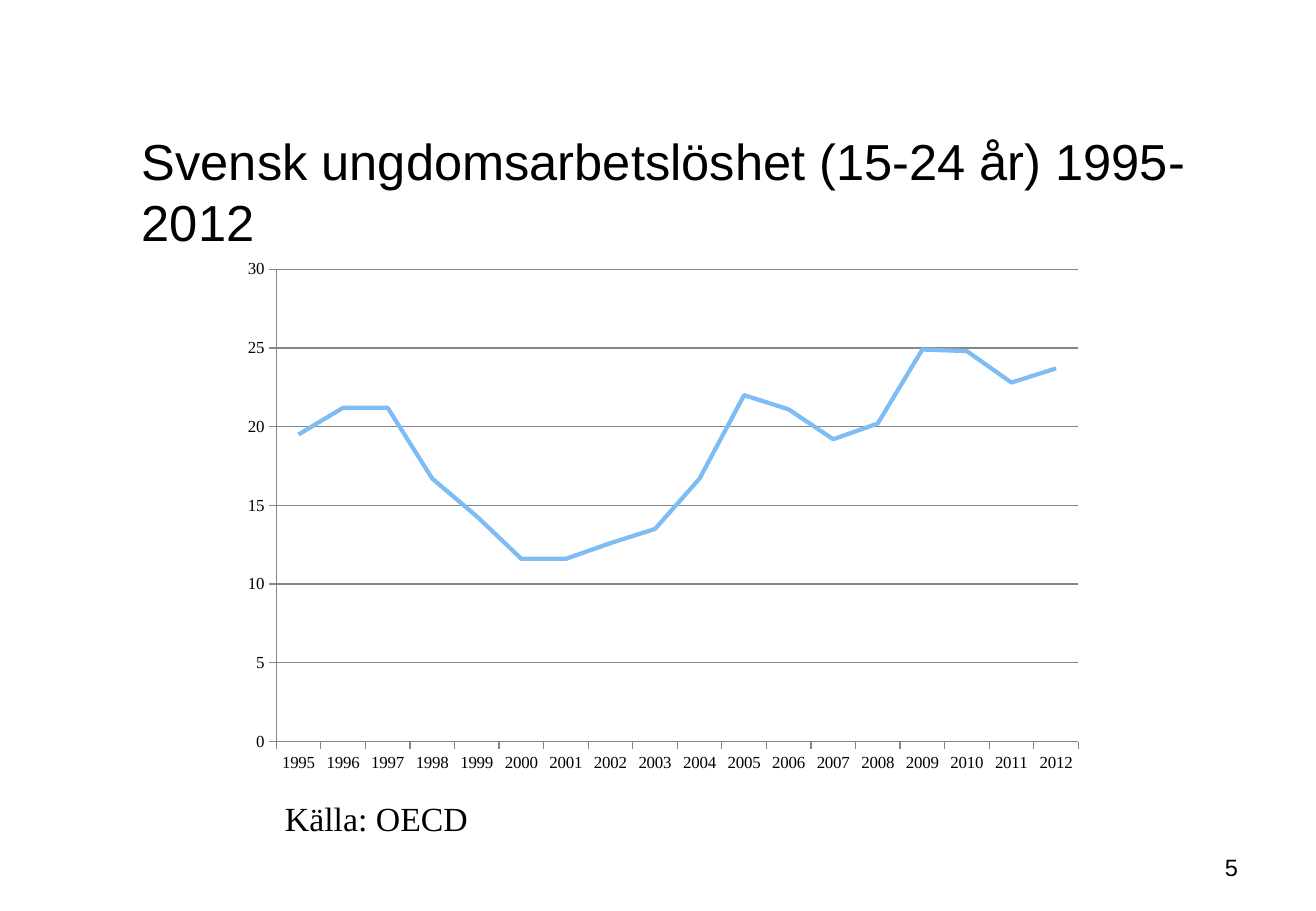
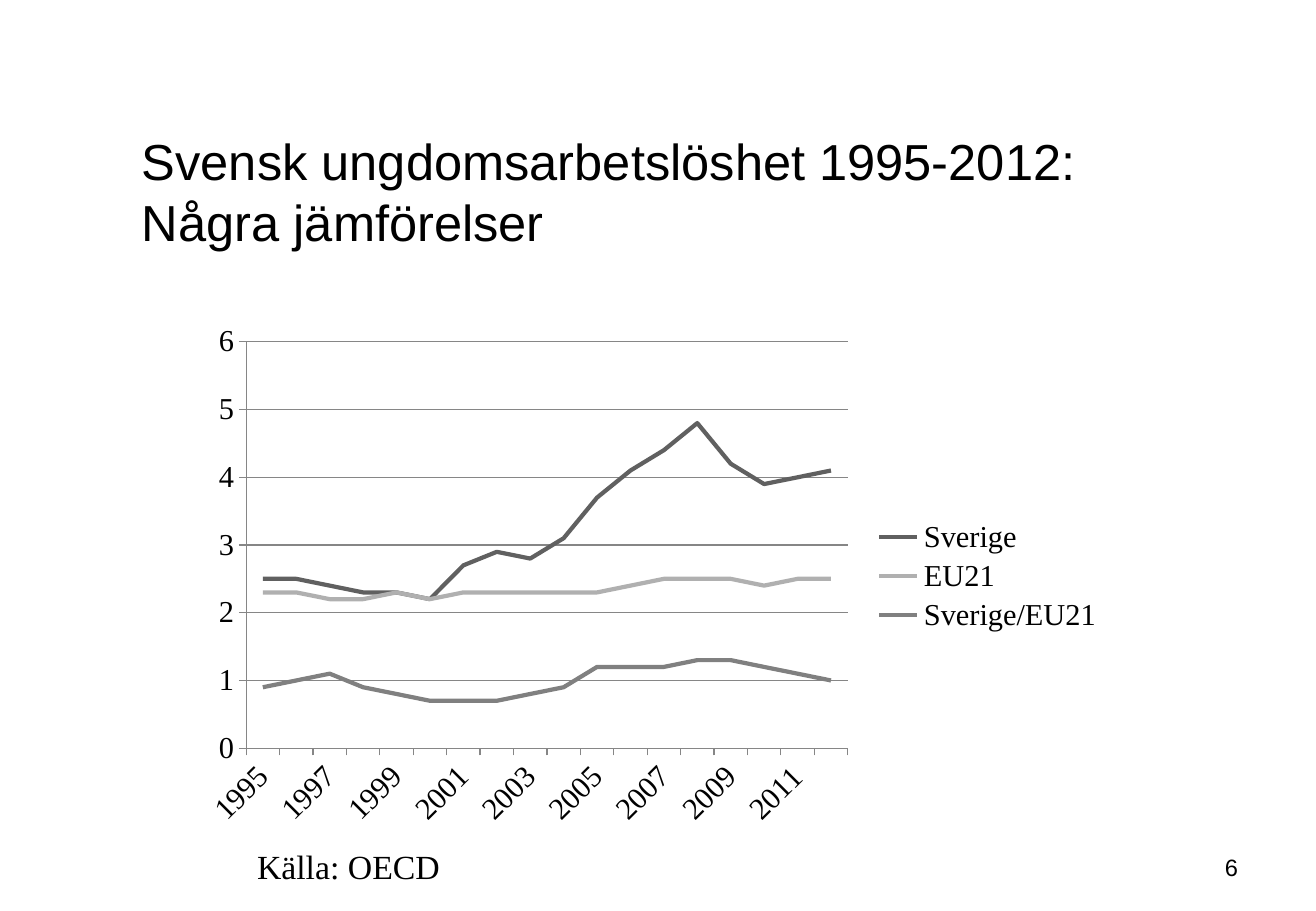
from pptx import Presentation
from pptx.chart.data import CategoryChartData as Data
from pptx.dml.color import RGBColor as RGB
from pptx.enum.chart import XL_CHART_TYPE as Kind, XL_LEGEND_POSITION as Spot, XL_TICK_MARK as Tick
from pptx.enum.text import MSO_ANCHOR as Anchor, PP_ALIGN as Align
from pptx.oxml import parse_xml
from pptx.oxml.ns import nsdecls
from pptx.util import Pt

BLACK = RGB(0x00, 0x00, 0x00)
BLUE = RGB(0x7D, 0xBC, 0xF5)
DARK = RGB(0x60, 0x60, 0x60)
LIGHT = RGB(0xB0, 0xB0, 0xB0)
GREY = RGB(0x80, 0x80, 0x80)
RULE = RGB(0x86, 0x86, 0x86)
SANS, SERIF = "Arial", "Times New Roman"
YEARS = [str(year) for year in range(1995, 2013)]

YOUTH = [("Series 1", BLUE, [19.5, 21.2, 21.2, 16.7, 14.3, 11.6, 11.6, 12.6, 13.5,
                             16.7, 22, 21.1, 19.2, 20.2, 24.9, 24.8, 22.8, 23.7])]
RATIOS = [
    ("Sverige", DARK, [2.5, 2.5, 2.4, 2.3, 2.3, 2.2, 2.7, 2.9, 2.8,
                       3.1, 3.7, 4.1, 4.4, 4.8, 4.2, 3.9, 4, 4.1]),
    ("EU21", LIGHT, [2.3, 2.3, 2.2, 2.2, 2.3, 2.2, 2.3, 2.3, 2.3,
                     2.3, 2.3, 2.4, 2.5, 2.5, 2.5, 2.4, 2.5, 2.5]),
    ("Sverige/EU21", GREY, [0.9, 1, 1.1, 0.9, 0.8, 0.7, 0.7, 0.7, 0.8,
                            0.9, 1.2, 1.2, 1.2, 1.3, 1.3, 1.2, 1.1, 1]),
]


def put_text(slide, box, text, size, font=SANS, align=Align.LEFT, anchor=Anchor.TOP, wrap=True):
    """Place one line or paragraph of text in a box."""
    frame = slide.shapes.add_textbox(*map(Pt, box)).text_frame
    frame.word_wrap, frame.vertical_anchor = wrap, anchor
    para = frame.paragraphs[0]
    para.alignment = align
    run = para.add_run()
    run.text = text
    run.font.size, run.font.name = Pt(size), font
    run.font.color.rgb = BLACK


def set_font(font, size):
    """Give a chart font its face, size and colour."""
    font.name, font.size, font.bold = SERIF, Pt(size), False
    font.color.rgb = BLACK


def set_plot(chart, plot):
    """Fix the inner plot area as fractions of the chart box."""
    area = chart._chartSpace.chart.plotArea
    for old in area.xpath("./c:layout"):
        area.remove(old)
    sizes = "".join(f'<c:{key} val="{val}"/>' for key, val in zip("xywh", plot))
    area.insert(0, parse_xml(
        f'<c:layout {nsdecls("c")}><c:manualLayout><c:layoutTarget val="inner"/>'
        f'<c:xMode val="edge"/><c:yMode val="edge"/>{sizes}</c:manualLayout></c:layout>'))


def put_chart(slide, box, rows, size, top, step, plot, legend=False, turn=0):
    """Draw a line chart of the yearly rows in a box."""
    data = Data()
    data.categories = YEARS
    for name, _, vals in rows:
        data.add_series(name, vals)
    chart = slide.shapes.add_chart(Kind.LINE, *map(Pt, box), data).chart
    set_font(chart.font, size)
    chart.has_title = False
    chart.has_legend = legend
    if legend:
        chart.legend.position = Spot.RIGHT
        chart.legend.include_in_layout = False
        set_font(chart.legend.font, size)
    chart.plots[0].vary_by_categories = False
    for line, (_, color, _) in zip(chart.plots[0].series, rows):
        line.smooth = False
        line.format.line.width = Pt(2.5)
        line.format.line.color.rgb = color
    years, scale = chart.category_axis, chart.value_axis
    scale.minimum_scale, scale.maximum_scale, scale.major_unit = 0, top, step
    scale.has_major_gridlines = True
    for axis in (years, scale):
        axis.major_tick_mark = Tick.OUTSIDE
        set_font(axis.tick_labels.font, size)
    for part in (years, scale, scale.major_gridlines):
        part.format.line.width = Pt(0.75)
        part.format.line.color.rgb = RULE
    if turn:
        for body in chart._chartSpace.xpath(".//c:catAx/c:txPr/a:bodyPr"):
            body.set("rot", str(turn * 60000))
    set_plot(chart, plot)


def add_page(deck, title, number, source, box, **look):
    """Add a slide with title, page number, chart and source line."""
    slide = deck.slides.add_slide(deck.slide_layouts[6])
    put_text(slide, (77, 90, 644.5, 46), title, 30, anchor=Anchor.MIDDLE)
    put_text(slide, (558.7, 501.8, 182.2, 37.4), str(number), 14, align=Align.RIGHT)
    put_chart(slide, box, **look)
    put_text(slide, (*source, 123.8, 31.7), "Källa: OECD", 20, SERIF, Align.CENTER, wrap=False)


def main():
    """Build and save the deck."""
    deck = Presentation()
    deck.slide_width, deck.slide_height = Pt(780), Pt(540)
    add_page(deck, "Svensk ungdomsarbetslöshet (15-24 år) 1995-2012", 5,
             (161.3, 469.4), (138.2, 146.9, 511.2, 318.2),
             rows=YOUTH, size=10, top=30, step=5, plot=(0.05, 0.04, 0.93, 0.88))
    add_page(deck, "Svensk ungdomsarbetslöshet 1995-2012: Några jämförelser", 6,
             (144.7, 497.5), (113, 187.2, 548.6, 308.9),
             rows=RATIOS, size=18, top=6, step=1, plot=(0.06, 0.05, 0.65, 0.78),
             legend=True, turn=-45)
    deck.save("out.pptx")


if __name__ == "__main__":
    main()
